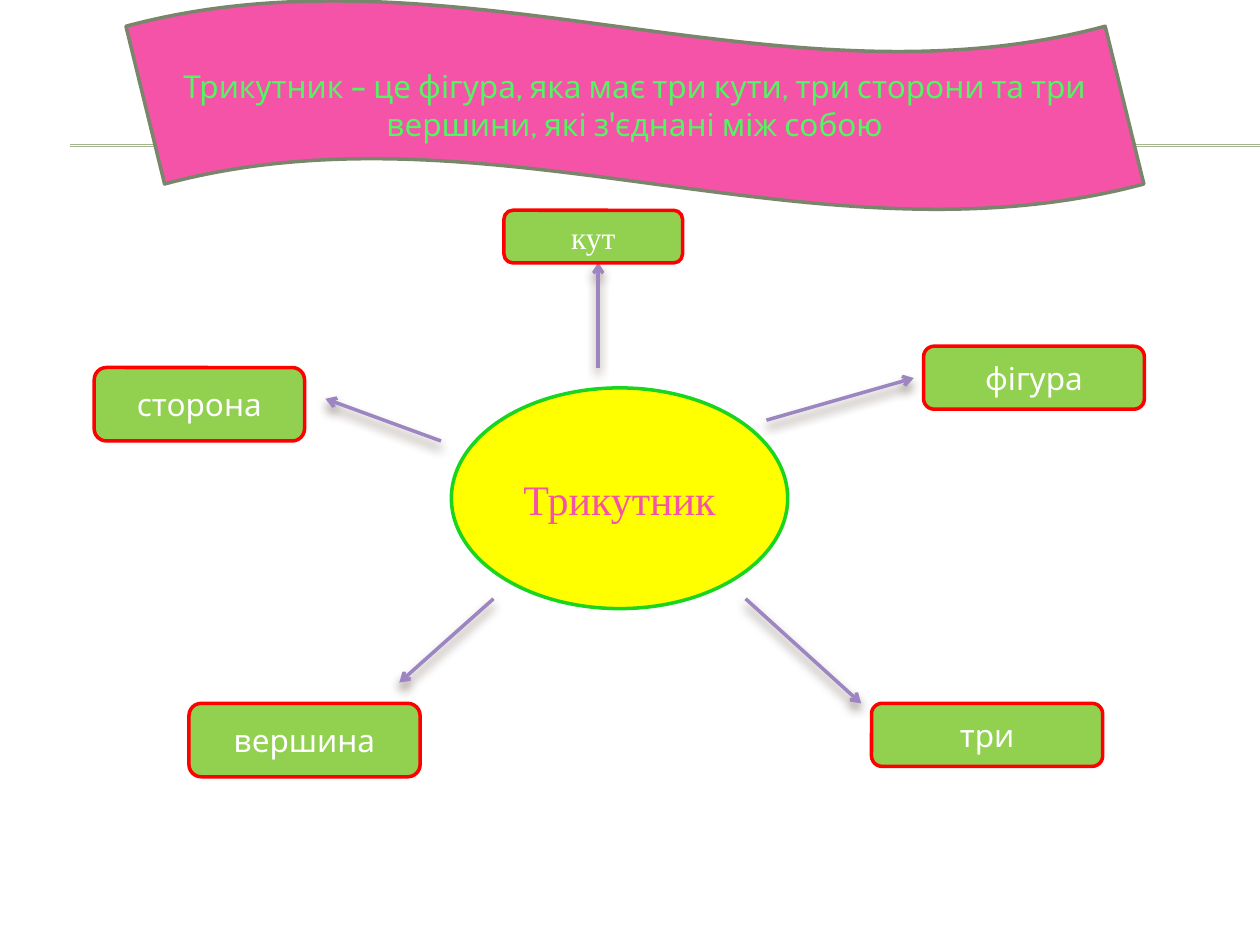
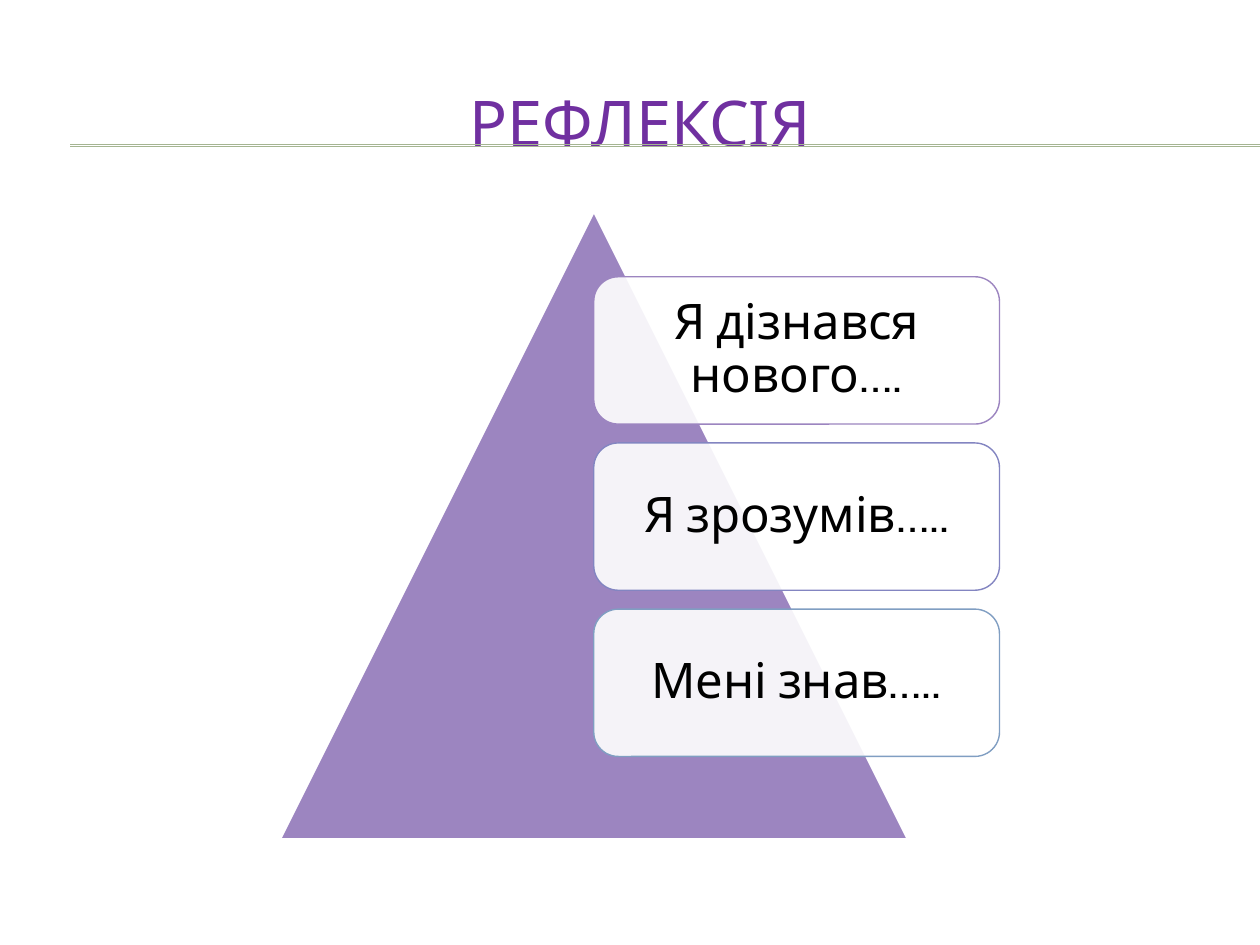
from lxml.etree import SubElement
from pptx import Presentation
from pptx.dml.color import RGBColor
from pptx.enum.shapes import MSO_CONNECTOR, MSO_SHAPE
from pptx.enum.text import MSO_ANCHOR, PP_ALIGN
from pptx.oxml import parse_xml
from pptx.oxml.ns import nsdecls, qn
from pptx.util import Cm, Pt

COLORS = {
    "rule": "A5B592", "pink": "F553A8", "olive": "7A866C", "mint": "52F662",
    "yellow": "FFFF00", "green": "19D51D", "lime": "92D050", "red": "FF0000",
    "lilac": "9C85C0", "periwinkle": "8385C1", "steel": "809EC2",
    "violet": "7030A0", "white": "FFFFFF", "black": "000000", "shadow": "4E3B30",
}
COLORS = {name: RGBColor.from_string(value) for name, value in COLORS.items()}
BODY_FONT = "Cabin"
SERIF_FONT = "Times New Roman"


def write_text(shape, text, size=18, color="white", font=BODY_FONT, inset=0.25, spacing=1.0):
    frame = shape.text_frame
    frame.word_wrap = True
    frame.vertical_anchor = MSO_ANCHOR.MIDDLE
    frame.margin_left = frame.margin_right = Cm(inset)
    frame.margin_top = frame.margin_bottom = Cm(inset / 2 if inset == 0.25 else inset)
    paragraph = frame.paragraphs[0]
    paragraph.alignment = PP_ALIGN.CENTER
    paragraph.line_spacing = spacing
    run = paragraph.add_run()
    run.text = text
    run.font.size = Pt(size)
    run.font.name = font
    run.font.color.rgb = COLORS[color]


def add_figure(slide, kind, box, fill, line=None, width=2):
    shape = slide.shapes.add_shape(kind, *[Cm(length) for length in box])
    shape.shadow.inherit = False
    shape.fill.solid()
    shape.fill.fore_color.rgb = COLORS[fill]
    if line:
        shape.line.color.rgb = COLORS[line]
        shape.line.width = Pt(width)
    else:
        shape.line.fill.background()
    return shape


presentation = Presentation()
presentation.slide_width = Cm(25.4)
presentation.slide_height = Cm(19.05)
map_slide = presentation.slides.add_slide(presentation.slide_layouts[6])
reflection_slide = presentation.slides.add_slide(presentation.slide_layouts[5])

for slide in (map_slide, reflection_slide):
    for height in (2.92, 2.95):
        rule = slide.shapes.add_connector(
            MSO_CONNECTOR.STRAIGHT, Cm(1.42), Cm(height), Cm(25.4), Cm(height))
        rule.line.color.rgb = COLORS["rule"]
        rule.line.width = Pt(0.75)
        SubElement(rule._element.spPr, qn("a:effectLst"))

banner = add_figure(map_slide, MSO_SHAPE.WAVE, (2.54, 0, 20.52, 4.24), "pink", "olive")
banner.adjustments[0] = 0.125
banner.adjustments[1] = 0.019
write_text(
    banner,
    "Трикутник – це фігура, яка має три кути, три сторони та три вершини, які з'єднані між собою",
    color="mint")

center = add_figure(map_slide, MSO_SHAPE.OVAL, (9.1, 7.82, 6.78, 4.45), "yellow", "green")
write_text(center, "Трикутник", size=24, color="pink", font=SERIF_FONT)

arrows = [
    (15.45, 8.47, 18.42, 7.62),
    (15.03, 12.07, 17.36, 14.18),
    (9.95, 12.07, 8.05, 13.76),
    (8.89, 8.89, 6.56, 8.04),
    (12.06, 7.41, 12.06, 5.29),
]
for ends in arrows:
    arrow = map_slide.shapes.add_connector(
        MSO_CONNECTOR.STRAIGHT, *[Cm(length) for length in ends])
    arrow.line.color.rgb = COLORS["lilac"]
    arrow.line.width = Pt(2)
    SubElement(arrow.line._get_or_add_ln(), qn("a:tailEnd"), type="arrow")
    arrow._element.spPr.append(parse_xml(
        f'<a:effectLst {nsdecls("a")}>'
        f'<a:outerShdw blurRad="{Pt(6)}" dist="{Pt(4)}" dir="5400000" rotWithShape="0">'
        f'<a:srgbClr val="{COLORS["shadow"]}"><a:alpha val="60000"/></a:srgbClr>'
        '</a:outerShdw></a:effectLst>'))

words = [
    ("сторона", (1.9, 7.41, 4.24, 1.48), BODY_FONT),
    ("вершина", (3.81, 14.18, 4.66, 1.48), BODY_FONT),
    ("кут", (10.16, 4.24, 3.6, 1.06), SERIF_FONT),
    ("фігура", (18.62, 6.98, 4.45, 1.27), BODY_FONT),
    ("три", (17.57, 14.18, 4.66, 1.27), BODY_FONT),
]
for word, box, font in words:
    label = add_figure(map_slide, MSO_SHAPE.ROUNDED_RECTANGLE, box, "lime", "red")
    write_text(label, word, font=font)

title = reflection_slide.shapes.title
title.left, title.top, title.width, title.height = Cm(0.84), Cm(1.27), Cm(24.13), Cm(2.34)
write_text(title, "РЕФЛЕКСІЯ", size=36, color="violet")

add_figure(reflection_slide, MSO_SHAPE.ISOSCELES_TRIANGLE, (5.69, 4.32, 12.57, 12.57), "lilac")

sentences = [
    ("Я дізнався нового….", "lilac"),
    ("Я зрозумів…..", "periwinkle"),
    ("Мені знав…..", "steel"),
]
for index, (sentence, outline) in enumerate(sentences):
    card = add_figure(
        reflection_slide, MSO_SHAPE.ROUNDED_RECTANGLE,
        (11.97, 5.58 + index * 3.35, 8.18, 2.97), "white", outline, width=0.79)
    fill_color = card._element.spPr.find(qn("a:solidFill"))[0]
    SubElement(fill_color, qn("a:alpha"), val="90000")
    write_text(card, sentence, size=28, color="black", inset=0.3, spacing=0.9)

presentation.save("out.pptx")
